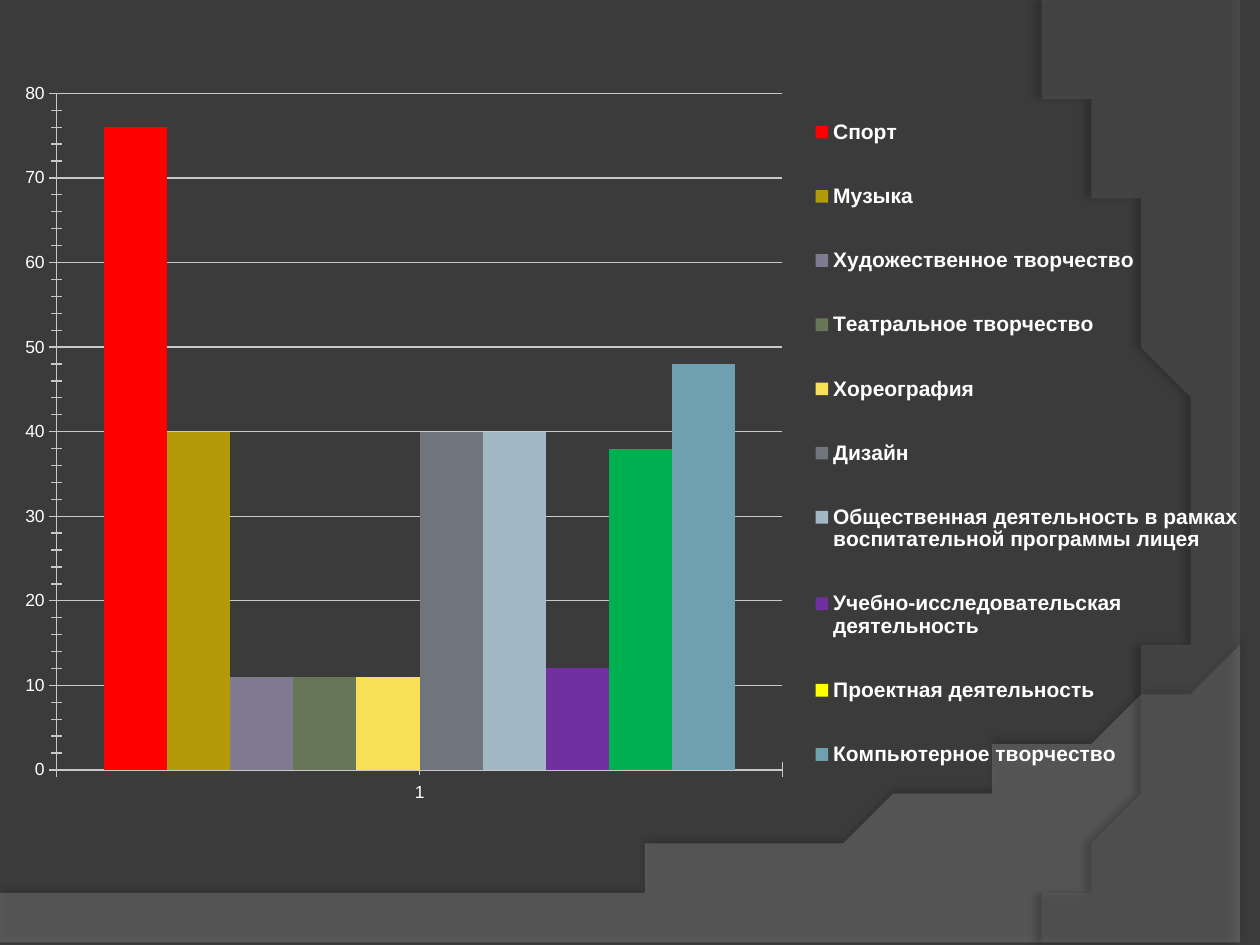
import pptx
import pptx.chart.data
import pptx.dml.color
import pptx.enum.chart
import pptx.oxml
import pptx.oxml.ns
import pptx.util

Cm, Pt = pptx.util.Cm, pptx.util.Pt
qn, nsdecls = pptx.oxml.ns.qn, pptx.oxml.ns.nsdecls

LINE_GREY = "C8C8C8"
WHITE = "FFFFFF"

INTERESTS = [
    ("Спорт", 76, "FF0000"),
    ("Музыка", 40, "B39A09"),
    ("Художественное творчество", 11, "7F7A90"),
    ("Театральное творчество", 11, "677656"),
    ("Хореография", 11, "F7DF56"),
    ("Дизайн", 40, "70757D"),
    ("Общественная деятельность в рамках воспитательной программы лицея", 40, "A2B9C5"),
    ("Учебно-исследовательская деятельность", 12, "7030A0"),
    ("Проектная деятельность", 38, "FFFF00"),
    ("Компьютерное творчество", 48, "6EA0B0"),
]
PROJECT_BAR = (8, "00B050")  # this bar differs from its legend key


def rgb(value):
    return pptx.dml.color.RGBColor.from_string(value)


def paint(fill, color):
    fill.solid()
    fill.fore_color.rgb = rgb(color)


def apply_format(target, values):
    for name, value in values.items():
        setattr(target, name, value)


def format_font(font, size, bold):
    apply_format(font, {"name": "Arial", "size": Pt(size), "bold": bold})
    font.color.rgb = rgb(WHITE)


def curve(start, control1, control2, end, steps=60):
    """Points along a cubic curve, without its start."""
    points = []
    for step in range(1, steps + 1):
        t = step / steps
        weights = ((1 - t) ** 3, 3 * t * (1 - t) ** 2, 3 * t * t * (1 - t), t ** 3)
        corners = (start, control1, control2, end)
        points.append(tuple(sum(w * c[axis] for w, c in zip(weights, corners))
                            for axis in (0, 1)))
    return points


def add_wave(slide, outline, color, opacity, shadow):
    """Translucent background wave; the outline is in centimetres."""
    builder = slide.shapes.build_freeform(*outline[0], scale=Cm(1))
    builder.add_line_segments(outline[1:], close=True)
    wave = builder.convert_to_shape()
    paint(wave.fill, color)
    wave.line.fill.background()
    wave.shadow.inherit = False
    properties = wave.element.spPr
    properties.find(qn("a:solidFill"))[0].append(pptx.oxml.parse_xml(
        f'<a:alpha {nsdecls("a")} val="{opacity * 1000}"/>'))
    shade, blur, distance, angle = shadow
    properties.find(qn("a:effectLst")).append(pptx.oxml.parse_xml(
        f'<a:outerShdw {nsdecls("a")} blurRad="{Pt(blur)}" dist="{Pt(distance)}" '
        f'dir="{angle * 60000}" algn="ctr" rotWithShape="0"><a:srgbClr val="000000">'
        f'<a:alpha val="{shade * 1000}"/></a:srgbClr></a:outerShdw>'))


def place_part(part, index, x, y, w, h, inner=False):
    """Give a chart part a fixed place, as fractions of the chart."""
    for old in part.findall(qn("c:layout")):
        part.remove(old)
    target = '<c:layoutTarget val="inner"/>' if inner else ""
    part.insert(index, pptx.oxml.parse_xml(
        f'<c:layout {nsdecls("c")}><c:manualLayout>{target}'
        f'<c:xMode val="edge"/><c:yMode val="edge"/><c:x val="{x}"/><c:y val="{y}"/>'
        f'<c:w val="{w}"/><c:h val="{h}"/></c:manualLayout></c:layout>'))


def format_axis(axis, values):
    cross = pptx.enum.chart.XL_TICK_MARK.CROSS
    apply_format(axis, {"major_tick_mark": cross, "minor_tick_mark": cross, **values})
    lines = [axis.format.line]
    if axis.has_major_gridlines:
        lines.append(axis.major_gridlines.format.line)
    for line in lines:
        line.width = Pt(0.75)
        line.color.rgb = rgb(LINE_GREY)


def add_interest_chart(slide):
    data = pptx.chart.data.CategoryChartData()
    data.categories = ["1"]
    for name, count, _ in INTERESTS:
        data.add_series(name, [count])
    chart = slide.shapes.add_chart(
        pptx.enum.chart.XL_CHART_TYPE.COLUMN_CLUSTERED,
        Cm(0), Cm(1.4), Cm(25.4), Cm(15.09), data).chart
    apply_format(chart, {"has_title": False, "has_legend": True})
    format_font(chart.font, 10, False)

    # Bars
    bars = chart.plots[0]
    apply_format(bars, {"gap_width": 150, "overlap": 0, "vary_by_categories": False})
    for series, (_, _, color) in zip(bars.series, INTERESTS):
        series.invert_if_negative = False
        paint(series.format.fill, color)
    project, project_color = PROJECT_BAR
    paint(bars.series[project].points[0].format.fill, project_color)

    # Axes
    format_axis(chart.category_axis, {"has_major_gridlines": False})
    format_axis(chart.value_axis, {"has_major_gridlines": True, "minimum_scale": 0,
                                   "maximum_scale": 80, "major_unit": 10})

    # Legend
    legend = chart.legend
    apply_format(legend, {"position": pptx.enum.chart.XL_LEGEND_POSITION.RIGHT,
                          "include_in_layout": False})
    format_font(legend.font, 12, True)

    plot_area = chart.element.find(qn("c:chart")).find(qn("c:plotArea"))
    place_part(plot_area, 0, 0.045, 0.032, 0.576, 0.904, inner=True)
    place_part(chart.element.find(qn("c:chart")).find(qn("c:legend")), 1,
               0.635, 0.013, 0.36, 0.973)


def main():
    deck = pptx.Presentation()
    apply_format(deck, {"slide_width": Cm(25.4), "slide_height": Cm(19.05)})
    slide = deck.slides.add_slide(deck.slide_layouts[6])
    paint(slide.background.fill, "3B3B3B")

    # Background waves
    bottom_wave = [(0, 17.91), (0, 19.08), (25.4, 19.08), (25.4, 13.21)]
    bottom_wave += curve((25.4, 13.21), (14.2, 18.52), (9.93, 18.26), (0, 17.91))
    add_wave(slide, bottom_wave, "7F7F7F", 45, (35, 4, 3.5, 270))
    side_wave = [(25.4, 0.05), (25.4, 19.05), (20.85, 19.05)]
    side_wave += curve((20.85, 19.05), (23.75, 15.72), (25.86, 7.62), (20.32, 0))
    add_wave(slide, side_wave, "5E5E5E", 40, (45, 4, 4, 180))

    add_interest_chart(slide)
    deck.save("out.pptx")


if __name__ == "__main__":
    main()
